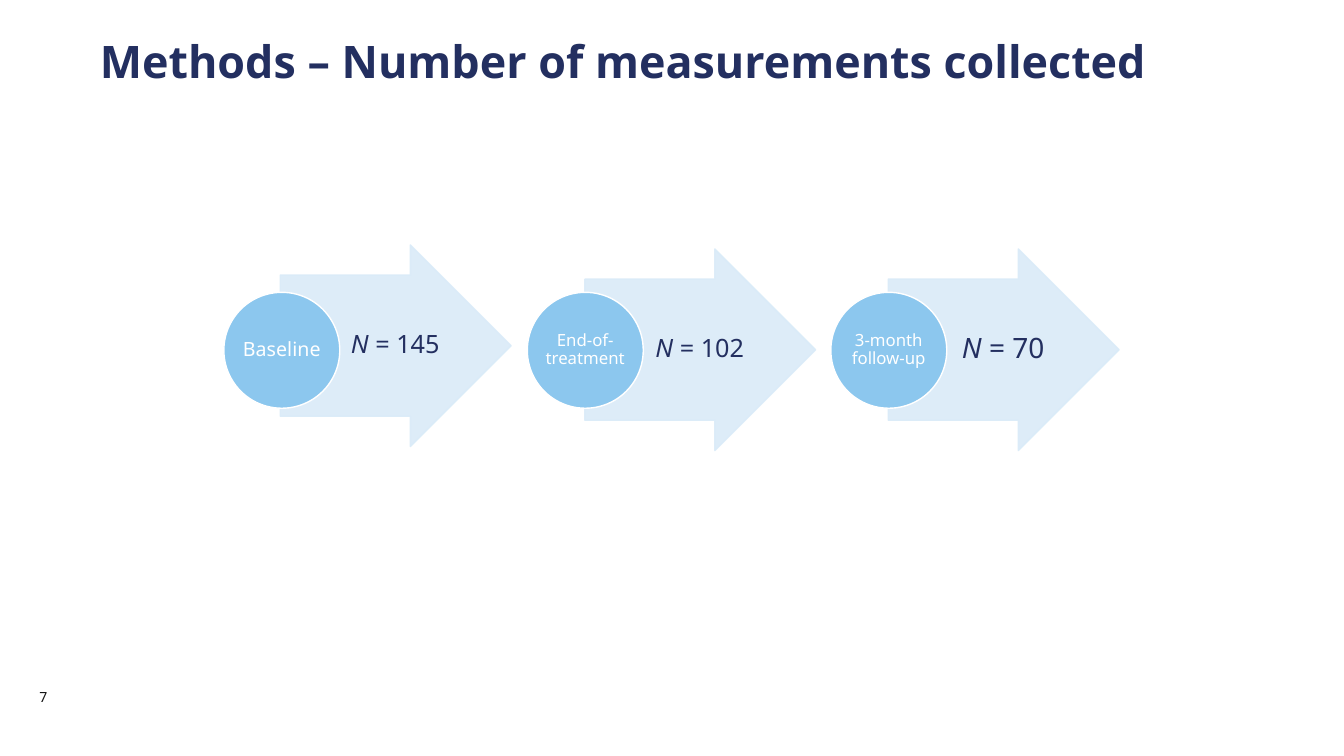
from pptx import Presentation
from pptx.dml.color import RGBColor
from pptx.enum.shapes import MSO_SHAPE
from pptx.enum.text import MSO_ANCHOR, MSO_AUTO_SIZE, PP_ALIGN
from pptx.oxml.ns import qn
from pptx.util import Pt
from lxml import etree

ARROW, OVAL = MSO_SHAPE.RIGHT_ARROW, MSO_SHAPE.OVAL
TOP, MIDDLE = MSO_ANCHOR.TOP, MSO_ANCHOR.MIDDLE
LEFT, CENTER = PP_ALIGN.LEFT, PP_ALIGN.CENTER
GROW, FIXED = MSO_AUTO_SIZE.SHAPE_TO_FIT_TEXT, MSO_AUTO_SIZE.NONE

PX = 9144  # 100 px to the inch
THEME = {
    "font": "Noto Sans",
    "navy": RGBColor.from_string("232F60"),
    "black": RGBColor.from_string("151515"),
    "pale": RGBColor.from_string("DAEBF8"),
    "blue": RGBColor.from_string("8CC7EE"),
    "white": RGBColor.from_string("FFFFFF"),
    "title": 32,
    "page": 10,
}


def add_form(kind, box, fill, line):
    form = slide.shapes.add_shape(kind, *[n * PX for n in box])
    form.shadow.inherit = False
    form.fill.solid()
    form.fill.fore_color.rgb = THEME[fill]
    form.line.color.rgb = THEME[line]
    form.line.width = Pt(1)
    return form


def set_text(shape, box, runs, size, color, align=LEFT, anchor=MIDDLE,
             pads=(0, 0, 0, 0), fit=FIXED, space=0.9):
    shape.left, shape.top, shape.width, shape.height = [n * PX for n in box]
    frame = shape.text_frame
    frame.word_wrap = True
    frame.auto_size = fit
    frame.vertical_anchor = anchor
    (frame.margin_left, frame.margin_top,
     frame.margin_right, frame.margin_bottom) = [n * PX for n in pads]
    para = frame.paragraphs[0]
    para.alignment = align
    para.line_spacing = space
    for words in runs:
        run = para.add_run()
        run.text = words
        run.font.name = THEME["font"]
        run.font.size = Pt(size)
        run.font.color.rgb = THEME[color]
    return para


deck = Presentation()
deck.slide_width, deck.slide_height = 1333 * PX, 750 * PX
slide = deck.slides.add_slide(deck.slide_layouts[5])

# Title
head = set_text(slide.shapes.title, (99, 39, 1136, 48),
                ["Methods – Number of measurements collected"],
                THEME["title"], "navy", anchor=TOP, fit=GROW)
head.runs[0].font.bold = True

# Page number
page = slide.shapes.add_textbox(0, 0, PX, PX)
set_text(page, (39, 683, 44, 17), ["7"], THEME["page"], "black",
         fit=GROW, space=1.0)

# Steps: label, label size, count, count size, arrow left and top
STEPS = [
    ("Baseline", 14, 145, 18, 278, 243),
    ("End-of-treatment", 12, 102, 18, 580, 247),
    ("3-month follow-up", 12, 70, 20, 881, 247),
]
for i, (label, small, count, large, left, top) in enumerate(STEPS):
    # Arrow, slightly see-through
    arrow = add_form(ARROW, (left, top, 229, 200), "pale", "pale")
    arrow.adjustments[0], arrow.adjustments[1] = 0.7, 0.5
    for color in arrow.element.spPr.iter(qn("a:srgbClr")):
        etree.SubElement(color, qn("a:alpha")).set("val", "90000")

    # Count
    note = slide.shapes.add_textbox(0, 0, PX, PX)
    para = set_text(note, (left + 57, top + 30, 112, 140),
                    ["N", f" = {count}"], large, "navy", CENTER,
                    pads=(5, 1, 3, 1))
    para.runs[0].font.italic = True

    # Circle with its label
    x = 222 + 301 * i
    add_form(OVAL, (x, 290, 115, 115), "blue", "white")
    name = slide.shapes.add_textbox(0, 0, PX, PX)
    set_text(name, (x + 17, 307, 81, 81), [label], small, "white", CENTER,
             pads=(1, 1, 1, 1))

deck.save("out.pptx")
